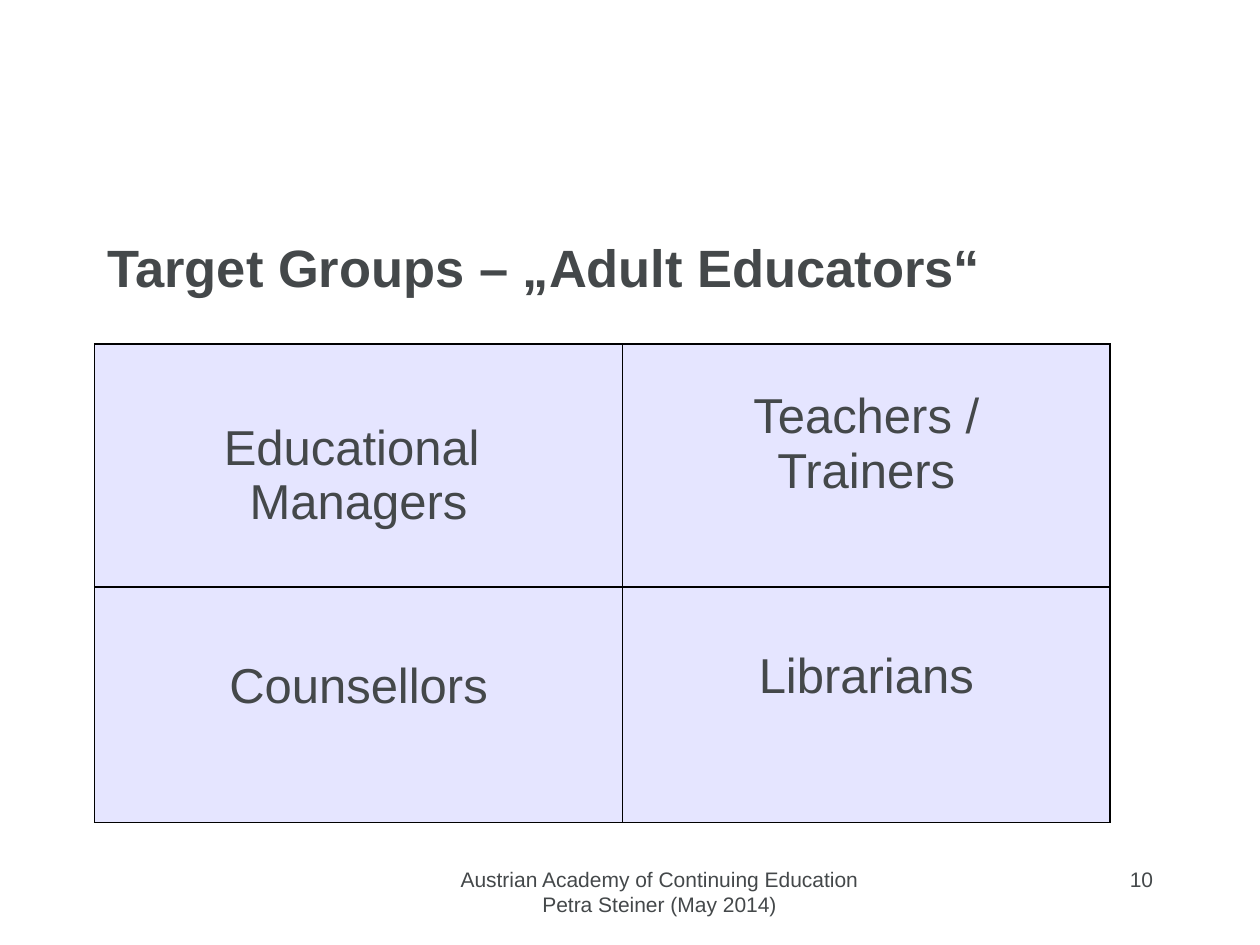
"""Build the slide on target groups of adult education."""
from lxml import etree
from pptx import Presentation
from pptx.dml.color import RGBColor
from pptx.enum.text import MSO_ANCHOR, PP_ALIGN
from pptx.oxml.ns import qn
from pptx.util import Inches, Pt

LEFT, CENTER, RIGHT = PP_ALIGN.LEFT, PP_ALIGN.CENTER, PP_ALIGN.RIGHT
MIDDLE = MSO_ANCHOR.MIDDLE
GREY = RGBColor(0x44, 0x48, 0x4A)
LAVENDER = RGBColor(0xCC, 0xCC, 0xFF)
BLACK = RGBColor(0, 0, 0)

TITLE = "Target Groups – „Adult Educators“"
GROUPS = [
    [(["Educational ", "Managers"], 0.61), (["Teachers /", "Trainers"], 0.36)],
    [(["Counsellors"], 0.57), (["Librarians"], 0.49)],
]
COL_WIDTHS = [4.19, 3.87]
ROW_HEIGHTS = [1.93, 1.87]
FOOTERS = [
    ("Austrian Academy of Continuing Education Petra Steiner (May 2014)", 3.42, 3.63, CENTER),
    ("10", 7.17, 2.08, RIGHT),
]


def write(tf, lines, size, align, bold=False):
    tf.word_wrap = True
    for i, line in enumerate(lines):
        p = tf.paragraphs[0] if i == 0 else tf.add_paragraph()
        p.text = line
        p.alignment = align
        p.font.name = "Arial"
        p.font.size = Pt(size)
        p.font.bold = bold
        p.font.color.rgb = GREY


def style_cell(cell):
    cell.fill.solid()
    cell.fill.fore_color.rgb = LAVENDER
    tc_pr = cell._tc.get_or_add_tcPr()
    color = tc_pr.find(qn("a:solidFill")).find(qn("a:srgbClr"))
    etree.SubElement(color, qn("a:alpha"), val="50000")
    for i, side in enumerate(("a:lnL", "a:lnR", "a:lnT", "a:lnB")):
        ln = etree.Element(qn(side), w=str(Pt(1)))
        fill = etree.SubElement(ln, qn("a:solidFill"))
        etree.SubElement(fill, qn("a:srgbClr"), val=str(BLACK))
        tc_pr.insert(i, ln)


def main():
    prs = Presentation()
    prs.slide_width, prs.slide_height = Inches(10), Inches(7.5)
    s = prs.slides.add_slide(prs.slide_layouts[5])

    title = s.shapes.title
    title.left, title.top = Inches(0.75), Inches(1.7)
    title.width, title.height = Inches(8.67), Inches(0.83)
    title.text_frame.vertical_anchor = MIDDLE
    write(title.text_frame, [TITLE], 30, LEFT, bold=True)

    table = s.shapes.add_table(
        len(ROW_HEIGHTS), len(COL_WIDTHS), Inches(0.75), Inches(2.73),
        Inches(sum(COL_WIDTHS)), Inches(sum(ROW_HEIGHTS))).table
    table.first_row = table.horz_banding = False
    for col, width in zip(table.columns, COL_WIDTHS):
        col.width = Inches(width)
    for row, height, groups in zip(table.rows, ROW_HEIGHTS, GROUPS):
        row.height = Inches(height)
        for cell, (lines, margin) in zip(row.cells, groups):
            style_cell(cell)
            cell.margin_top = Inches(margin)
            write(cell.text_frame, lines, 28, CENTER)

    for text, left, width, align in FOOTERS:
        sp = s.shapes.add_textbox(Inches(left), Inches(6.83), Inches(width), Inches(0.5))
        write(sp.text_frame, [text], 12, align)

    prs.save("out.pptx")


if __name__ == "__main__":
    main()
